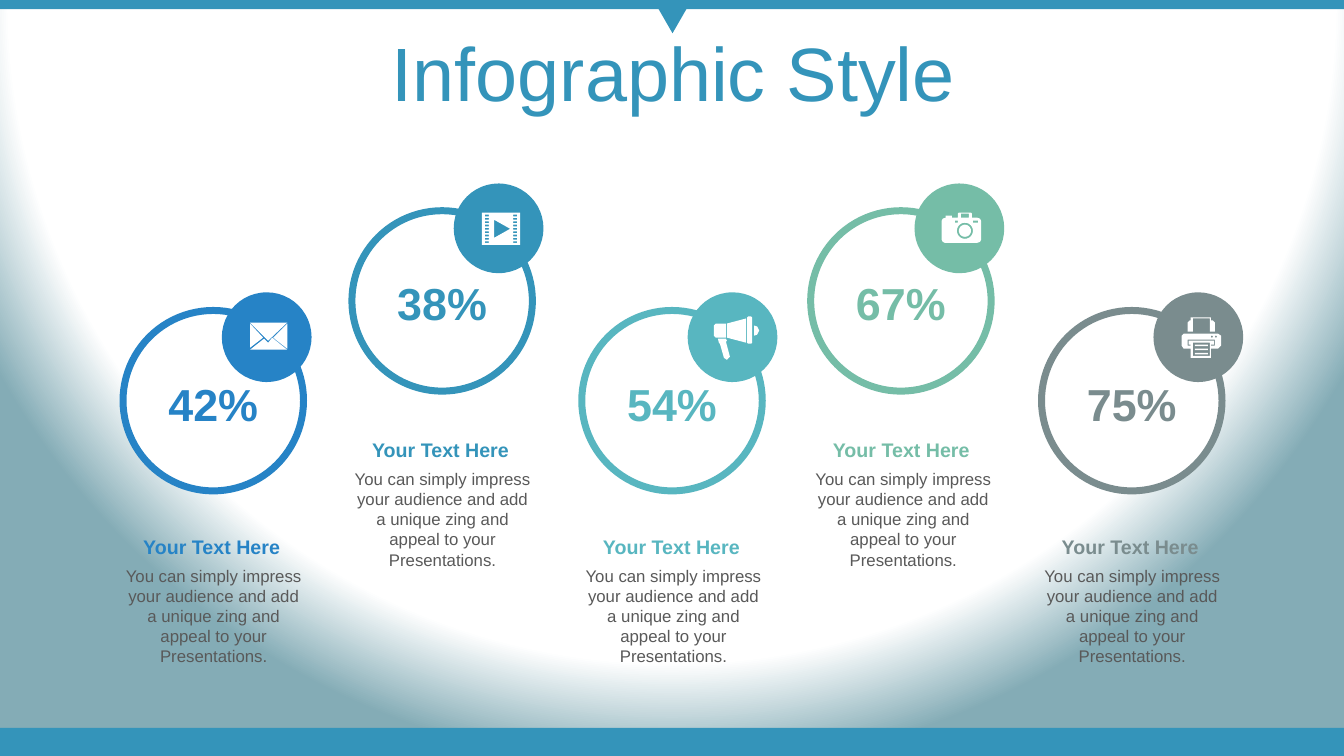
"""Build the Infographic Style slide with five percentage circles."""
import math
from dataclasses import dataclass

import pptx
import pptx.dml.color
import pptx.enum.shapes
import pptx.enum.text
import pptx.oxml
import pptx.oxml.ns
import pptx.util

Inches = pptx.util.Inches
SHAPES = pptx.enum.shapes.MSO_SHAPE
Contour = list[tuple[float, float]]

COLORS = {
    "blue": "2683C6", "ocean": "3494BA", "teal": "58B6C0", "green": "75BDA7",
    "gray": "7A8C8E", "body": "595959", "white": "FFFFFF", "haze": "84ACB6",
}
BODY = "You can simply impress your audience and add a unique zing and appeal to your Presentations."


@dataclass(frozen=True)
class Level:
    ring_top: float
    badge_top: float
    percent_top: float
    heading_top: float


@dataclass(frozen=True)
class Stat:
    percent: str
    color: str
    level: Level
    ring_left: float
    badge_left: float
    text_left: float
    icon: list[Contour]


def box(left: float, top: float, right: float, bottom: float, cut: float = 0) -> Contour:
    if not cut:
        return [(left, top), (right, top), (right, bottom), (left, bottom)]
    return [(left + cut, top), (right - cut, top), (right, top + cut), (right, bottom - cut),
            (right - cut, bottom), (left + cut, bottom), (left, bottom - cut), (left, top + cut)]


def disc(x: float, y: float, radius: float, steps: int = 24) -> Contour:
    angles = [2 * math.pi * step / steps for step in range(steps)]
    return [(x + radius * math.cos(angle), y + radius * math.sin(angle)) for angle in angles]


ENVELOPE = [
    [(2.7, 3.35), (2.85, 3.47), (2.48, 3.47), (2.62, 3.36), (2.66, 3.4)],
    [(2.85, 3.21), (2.85, 3.46), (2.71, 3.35)],
    [(2.48, 3.21), (2.61, 3.35), (2.48, 3.45)],
    [(2.48, 3.2), (2.85, 3.2), (2.66, 3.38)],
]
FILM = [
    box(4.78, 2.11, 5.16, 2.43),
    [(4.9, 2.18), (4.9, 2.36), (5.06, 2.27)],
    *[box(left, 2.13 + row * 0.033, left + 0.04, 2.147 + row * 0.033)
      for row in range(9) for left in (4.81, 5.09)],
]
MEGAPHONE = [
    [(7.2, 3.36), (7.21, 3.38), (7.2, 3.39), (7.24, 3.54), (7.22, 3.56), (7.21, 3.57),
     (7.18, 3.55), (7.14, 3.41), (7.13, 3.4), (7.12, 3.36)],
    [(7.48, 3.23), (7.51, 3.24), (7.53, 3.28), (7.51, 3.32), (7.48, 3.33)],
    [(7.1, 3.21), (7.2, 3.21), (7.2, 3.35), (7.1, 3.35), (7.08, 3.33), (7.08, 3.23)],
    [(7.4, 3.16), (7.4, 3.4), (7.21, 3.35), (7.21, 3.21)],
    box(7.41, 3.14, 7.46, 3.41, 0.01),
]
CAMERA = [
    [(9.51, 2.11), (9.63, 2.11), (9.64, 2.12), (9.64, 2.16), (9.69, 2.16), (9.72, 2.17),
     (9.73, 2.19), (9.73, 2.38), (9.72, 2.4), (9.69, 2.41), (9.37, 2.41), (9.35, 2.4),
     (9.34, 2.38), (9.34, 2.19), (9.35, 2.17), (9.38, 2.16), (9.38, 2.14), (9.44, 2.14),
     (9.44, 2.16), (9.5, 2.16), (9.5, 2.12)],
    box(9.53, 2.12, 9.61, 2.16),
    box(9.47, 2.19, 9.5, 2.21),
    box(9.65, 2.19, 9.7, 2.21),
    disc(9.57, 2.29, 0.08),
    disc(9.57, 2.29, 0.06),
]
PRINTER = [
    [(11.74, 3.31), (12.08, 3.31), (12.11, 3.33), (12.11, 3.43), (12.08, 3.46), (12.01, 3.46),
     (12.01, 3.55), (11.81, 3.55), (11.81, 3.46), (11.74, 3.46), (11.72, 3.43), (11.72, 3.33)],
    [(11.78, 3.37), (11.78, 3.43), (11.81, 3.43), (11.81, 3.42), (11.79, 3.42), (11.79, 3.38),
     (12.04, 3.38), (12.04, 3.42), (12.01, 3.42), (12.01, 3.43), (12.05, 3.43), (12.05, 3.37)],
    box(11.83, 3.4, 12, 3.53),
    *[box(11.85, top, 11.98, top + 0.015) for top in (3.42, 3.46, 3.5)],
    disc(12.02, 3.34, 0.01),
    disc(12.06, 3.34, 0.01),
    [(11.81, 3.15), (12.01, 3.15), (12.01, 3.18), (12.03, 3.18), (12.05, 3.2), (12.05, 3.29),
     (12, 3.29), (12, 3.16), (11.83, 3.16), (11.83, 3.29), (11.78, 3.29), (11.78, 3.2),
     (11.8, 3.18), (11.81, 3.18)],
]

LOW = Level(3.08, 2.9, 3.69, 5.26)
HIGH = Level(2.09, 1.82, 2.69, 4.3)
STATS = [
    Stat("42%", "blue", LOW, 1.22, 2.2, 1.12, ENVELOPE),
    Stat("38%", "ocean", HIGH, 3.49, 4.5, 3.39, FILM),
    Stat("54%", "teal", LOW, 5.77, 6.82, 5.68, MEGAPHONE),
    Stat("67%", "green", HIGH, 8.04, 9.07, 7.96, CAMERA),
    Stat("75%", "gray", LOW, 10.33, 11.44, 10.23, PRINTER),
]


def rgb(color: str) -> pptx.dml.color.RGBColor:
    return pptx.dml.color.RGBColor.from_string(COLORS[color])


def paint(shape, fill: str, outline: str | None = None) -> None:
    shape.shadow.inherit = False
    shape.fill.solid()
    shape.fill.fore_color.rgb = rgb(fill)
    if outline:
        shape.line.color.rgb = rgb(outline)
        shape.line.width = pptx.util.Pt(5)
    else:
        shape.line.fill.background()


def add_preset(slide, preset, left: float, top: float, width: float, height: float,
               fill: str, outline: str | None = None):
    shape = slide.shapes.add_shape(preset, Inches(left), Inches(top), Inches(width), Inches(height))
    paint(shape, fill, outline)
    return shape


def add_label(slide, text: str, left: float, top: float, width: float, height: float,
              size: float, color: str, bold: bool = False):
    label = slide.shapes.add_textbox(Inches(left), Inches(top), Inches(width), Inches(height))
    label.text_frame.word_wrap = True
    paragraph = label.text_frame.paragraphs[0]
    paragraph.text = text
    paragraph.alignment = pptx.enum.text.PP_ALIGN.CENTER
    paragraph.font.name = "Arial"
    paragraph.font.size = pptx.util.Pt(size)
    paragraph.font.bold = bold
    paragraph.font.color.rgb = rgb(color)
    return label


def add_icon(slide, contours: list[Contour]) -> None:
    outlines = [[(Inches(x), Inches(y)) for x, y in contour] for contour in contours]
    builder = slide.shapes.build_freeform(*outlines[0][0])
    for index, outline in enumerate(outlines):
        if index:
            builder.move_to(*outline[0])
        builder.add_line_segments(outline[1:], close=True)
    paint(builder.convert_to_shape(), "white")


def add_backdrop(slide) -> None:
    stops = "".join(
        f'<a:gs pos="{position}"><a:srgbClr val="{COLORS[color]}"/></a:gs>'
        for position, color in ((0, "white"), (86000, "white"), (100000, "haze")))
    slide.element.cSld.insert(0, pptx.oxml.parse_xml(
        f'<p:bg {pptx.oxml.ns.nsdecls("p", "a")}><p:bgPr><a:gradFill rotWithShape="1">'
        f'<a:gsLst>{stops}</a:gsLst><a:path path="circle">'
        '<a:fillToRect l="50000" t="-80000" r="50000" b="180000"/></a:path>'
        '</a:gradFill><a:effectLst/></p:bgPr></p:bg>'))
    add_preset(slide, SHAPES.RECTANGLE, 0, 7.22, 13.33, 0.28, "ocean")
    add_preset(slide, SHAPES.RECTANGLE, 0, 0, 13.33, 0.09, "ocean")
    pointer = add_preset(slide, SHAPES.ISOSCELES_TRIANGLE, 6.48, 0, 0.38, 0.33, "ocean")
    pointer.rotation = 180


def add_stat(slide, stat: Stat) -> None:
    level = stat.level
    add_label(slide, BODY, stat.text_left + 0.01, level.heading_top + 0.3, 1.98, 1.11, 12, "body")
    add_label(slide, "Your Text Here", stat.text_left, level.heading_top, 1.96, 0.34,
              14, stat.color, True)
    add_preset(slide, SHAPES.OVAL, stat.ring_left, level.ring_top, 1.79, 1.79, "white", stat.color)
    add_preset(slide, SHAPES.OVAL, stat.badge_left, level.badge_top, 0.89, 0.89, stat.color)
    add_label(slide, stat.percent, stat.ring_left + 0.34, level.percent_top, 1.11, 0.64,
              32, stat.color, True)
    add_icon(slide, stat.icon)


def main() -> None:
    deck = pptx.Presentation()
    deck.slide_width, deck.slide_height = Inches(13.33), Inches(7.5)
    slide = deck.slides.add_slide(deck.slide_layouts[6])
    add_backdrop(slide)
    title = add_label(slide, "Infographic Style", 0.35, 0.37, 12.66, 0.79, 54, "ocean")
    title.text_frame.vertical_anchor = pptx.enum.text.MSO_ANCHOR.MIDDLE
    title.text_frame.paragraphs[0].line_spacing = 0.9
    for stat in STATS:
        add_stat(slide, stat)
    deck.save("out.pptx")


if __name__ == "__main__":
    main()
